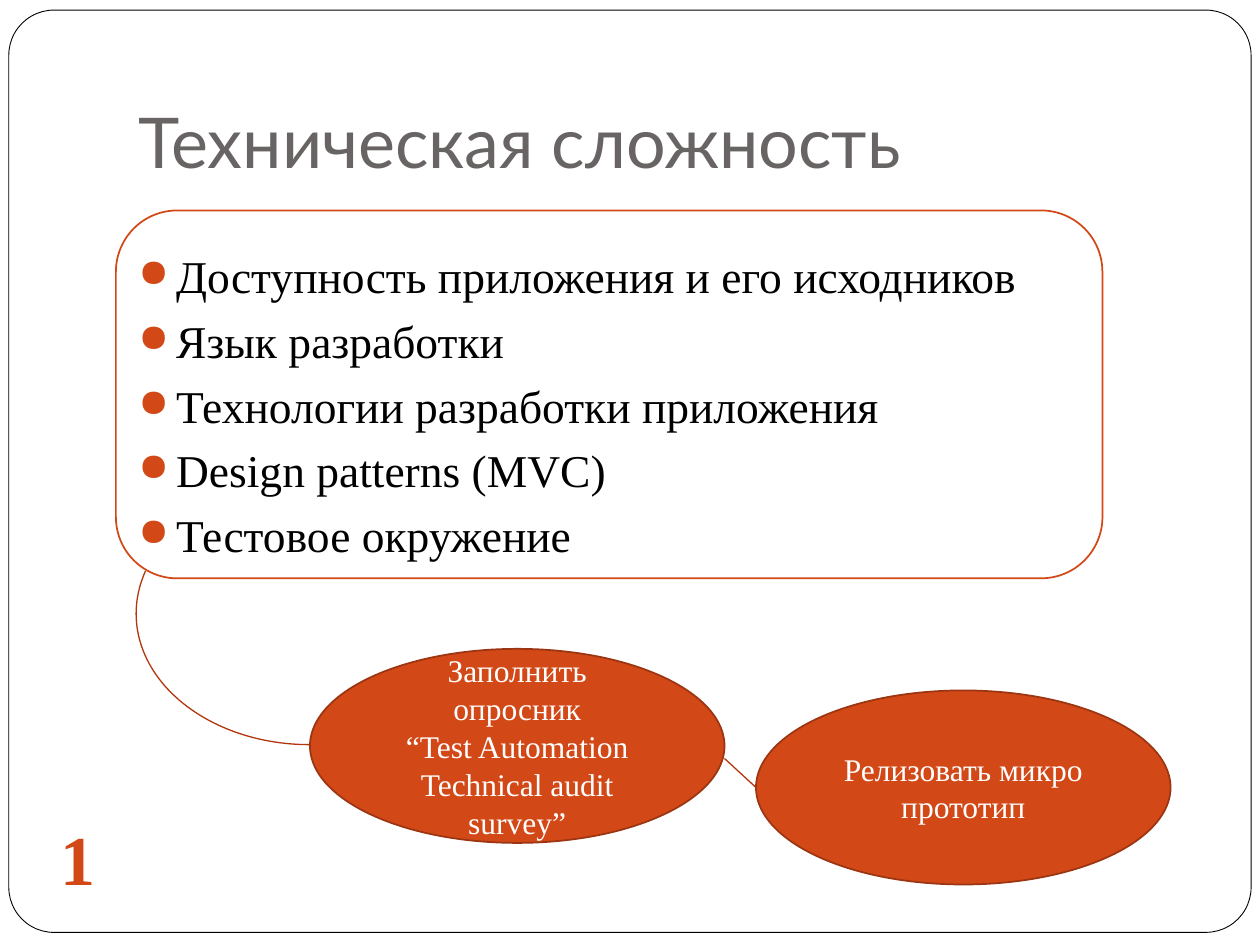
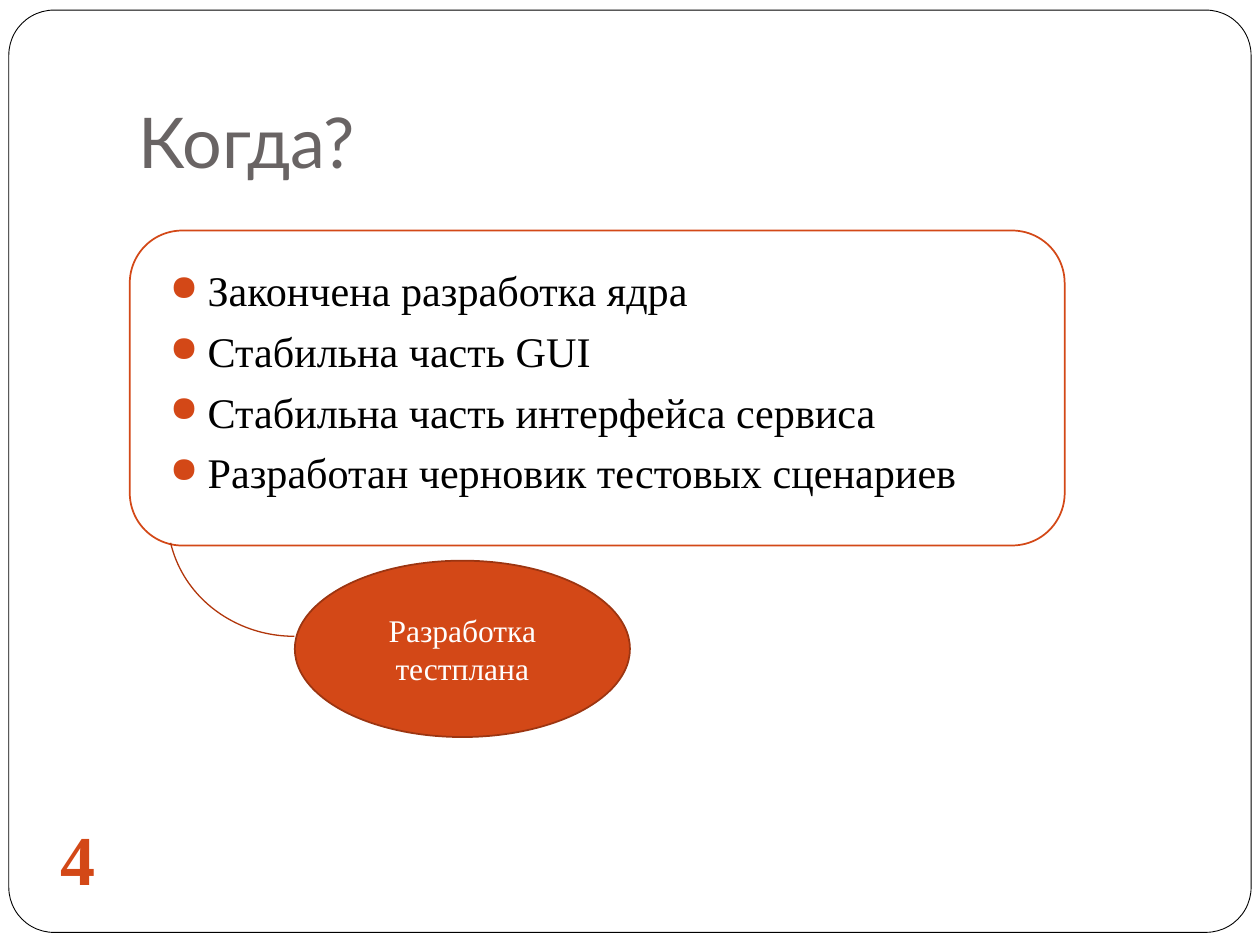
from lxml import etree
from pptx import Presentation
from pptx import util as u
from pptx.dml.color import RGBColor
from pptx.enum import shapes, text
from pptx.oxml.ns import qn

ACCENT = RGBColor(0xD3, 0x48, 0x17)
OVAL_EDGE = RGBColor(0x9C, 0x35, 0x11)
LINK = RGBColor(0xB1, 0x36, 0x0B)
GREY = RGBColor(0x69, 0x64, 0x64)
BLACK = RGBColor(0, 0, 0)
WHITE = RGBColor(255, 255, 255)
TITLE_FONT, BODY_FONT = "Lato", "Times New Roman"
TITLE_BOX = (1, 0.3, 8.5, 1.25)
FRAME_BOX = (0.07, 0.08, 9.86, 7.32)


def inches(box):
    """Turn a box of numbers into lengths."""
    return [u.Inches(v) for v in box]


def add_shape(s, kind, box, fill, line, width):
    """Add a shadowless preset shape; fill None leaves it hollow."""
    sp = s.shapes.add_shape(kind, *inches(box))
    sp.shadow.inherit = False
    if fill is None:
        sp.fill.background()
    else:
        sp.fill.solid()
        sp.fill.fore_color.rgb = fill
    sp.line.color.rgb = line
    sp.line.width = u.Pt(width)
    return sp


def style_text(tf, size, color, name=BODY_FONT, bold=False, align=text.PP_ALIGN.LEFT):
    """Format every paragraph and run of a text frame."""
    for p in tf.paragraphs:
        p.alignment = align
        for r in p.runs:
            r.font.size = u.Pt(size)
            r.font.name = name
            r.font.bold = bold
            r.font.color.rgb = color


def add_bullet(p):
    """Give a paragraph a hanging round accent bullet."""
    pPr = p._p.get_or_add_pPr()
    pPr.set("marL", str(u.Inches(0.3)))
    pPr.set("indent", str(-u.Inches(0.3)))
    clr = etree.SubElement(pPr, qn("a:buClr"))
    etree.SubElement(clr, qn("a:srgbClr"), val=str(ACCENT))
    etree.SubElement(pPr, qn("a:buSzPct"), val="85000")
    etree.SubElement(pPr, qn("a:buChar"), char="●")


def add_title(s, title):
    """Place the title placeholder above the shapes drawn so far."""
    sp = s.shapes.title
    s.shapes._spTree.append(sp._element)
    sp.left, sp.top, sp.width, sp.height = inches(TITLE_BOX)
    tf = sp.text_frame
    tf.text = title
    tf.word_wrap = True
    tf.auto_size = text.MSO_AUTO_SIZE.NONE
    tf.vertical_anchor = text.MSO_ANCHOR.BOTTOM
    tf.margin_bottom = u.Inches(0.1)
    style_text(tf, 40, GREY, TITLE_FONT)


def add_bullets(s, box, items, size):
    """Add the bullet list."""
    tf = s.shapes.add_textbox(*inches(box)).text_frame
    tf.word_wrap = True
    tf.text = "\n".join(items)
    style_text(tf, size, BLACK)
    for p in tf.paragraphs:
        p.space_before = u.Pt(5.8)
        add_bullet(p)


def add_number(s, number):
    """Add the large slide number at the lower left."""
    tf = s.shapes.add_textbox(*inches((0.38, 6.42, 0.54, 0.77))).text_frame
    tf.word_wrap = False
    tf.auto_size = text.MSO_AUTO_SIZE.SHAPE_TO_FIT_TEXT
    tf.text = str(number)
    style_text(tf, 40, ACCENT, bold=True)


def add_oval(s, box, label):
    """Add an action oval with a centred label."""
    sp = add_shape(s, shapes.MSO_SHAPE.OVAL, box, ACCENT, OVAL_EDGE, 1)
    tf = sp.text_frame
    tf.word_wrap = True
    tf.vertical_anchor = text.MSO_ANCHOR.MIDDLE
    tf.text = label
    style_text(tf, 18, WHITE, align=text.PP_ALIGN.CENTER)


def add_arc(s, box, end):
    """Add the arc that leads from the panel to the first oval."""
    sp = add_shape(s, shapes.MSO_SHAPE.ARC, box, None, LINK, 0.75)
    sp.rotation = 180
    sp.adjustments[0] = 162
    sp.adjustments[1] = end


def add_link(s, start, end):
    """Add a straight line between two ovals."""
    cx = s.shapes.add_connector(shapes.MSO_CONNECTOR.STRAIGHT, *inches(start + end))
    cx.line.color.rgb = LINK
    cx.line.width = u.Pt(0.75)
    etree.SubElement(cx._element.spPr, qn("a:effectLst"))


def add_slide(prs, title, number, panel, bullets, items, size):
    """Add a slide with frame, panel, title, bullets and number."""
    s = prs.slides.add_slide(prs.slide_layouts[5])
    rounded = shapes.MSO_SHAPE.ROUNDED_RECTANGLE
    frame = add_shape(s, rounded, FRAME_BOX, WHITE, BLACK, 0.5)
    frame.adjustments[0] = 0.049
    add_shape(s, rounded, panel, WHITE, ACCENT, 1)
    add_title(s, title)
    add_bullets(s, bullets, items, size)
    add_number(s, number)
    return s


def build_complexity(prs):
    """Build the slide on technical complexity."""
    items = ["Доступность приложения и его исходников", "Язык разработки",
             "Технологии разработки приложения", "Design patterns (MVC)",
             "Тестовое окружение"]
    s = add_slide(prs, "Техническая сложность", 1, (0.92, 1.67, 7.83, 2.92),
                  (1, 1.92, 8.5, 3.5), items, 26)
    add_oval(s, (2.46, 5.15, 3.29, 1.54),
             "Заполнить опросник\n“Test Automation Technical audit survey”")
    add_arc(s, (1.08, 3.83, 2.75, 2.08), 8.74)
    add_oval(s, (6, 5.48, 3.29, 1.54), "Релизовать микро прототип")
    add_link(s, (5.75, 6.02), (6, 6.25))


def build_timing(prs):
    """Build the slide on when to start."""
    items = ["Закончена разработка ядра", "Стабильна часть GUI",
             "Стабильна часть интерфейса сервиса",
             "Разработан черновик тестовых сценариев"]
    s = add_slide(prs, "Когда?", 4, (1.03, 1.83, 7.42, 2.5),
                  (1.25, 2.05, 6.67, 2.29), items, 24.1)
    add_oval(s, (2.34, 4.45, 2.66, 1.4), "Разработка тестплана")
    add_arc(s, (1.33, 3.16, 2.01, 1.89), 208.97)


def main():
    """Build and save the presentation."""
    prs = Presentation()
    prs.slide_width, prs.slide_height = u.Inches(10), u.Inches(7.5)
    build_complexity(prs)
    build_timing(prs)
    prs.save("out.pptx")


if __name__ == "__main__":
    main()
